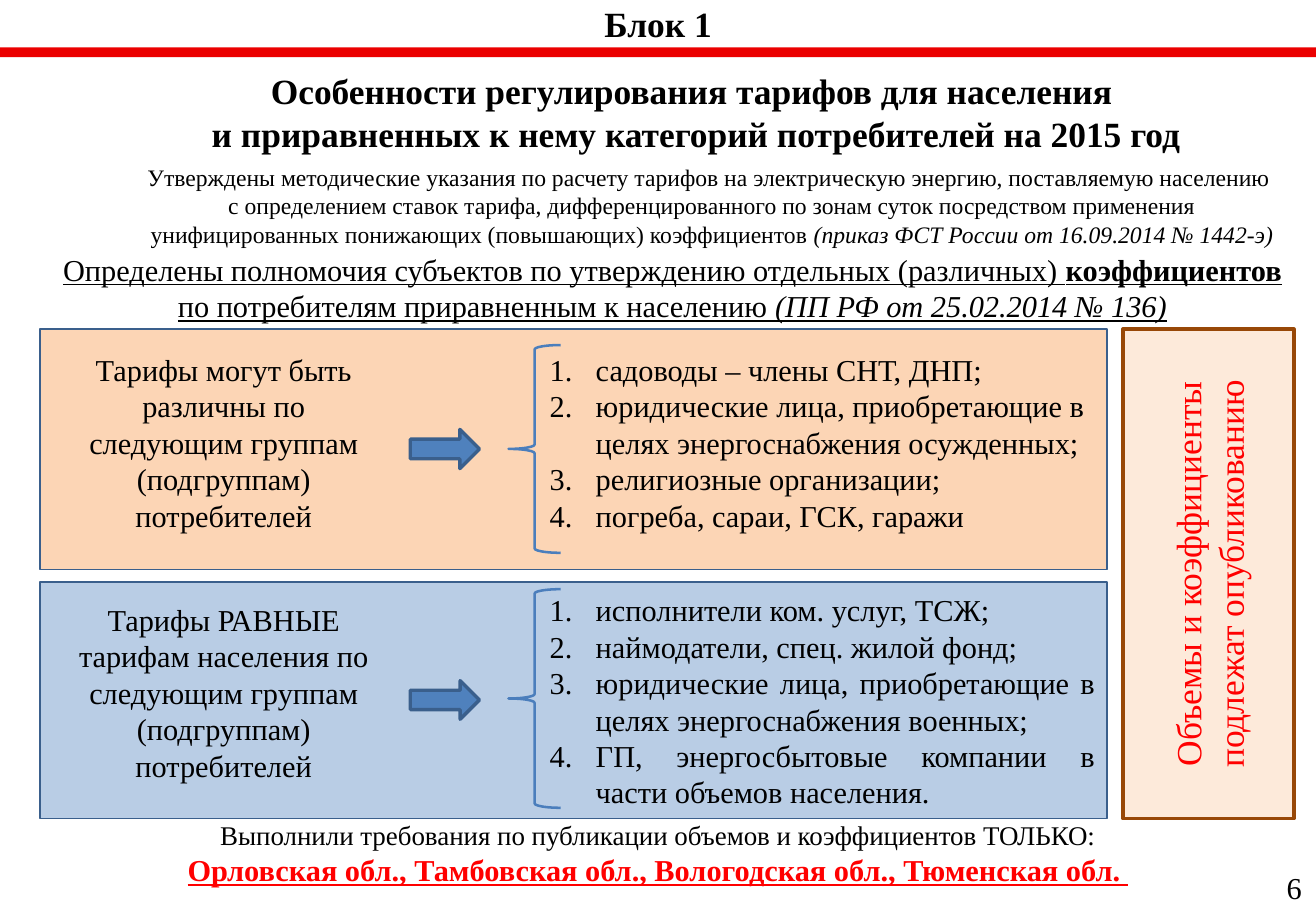
from collections import namedtuple
from dataclasses import dataclass
from lxml.etree import SubElement
from pptx import Presentation
from pptx.dml.color import RGBColor
from pptx.enum.shapes import MSO_SHAPE
from pptx.enum.text import MSO_ANCHOR, PP_ALIGN
from pptx.oxml.ns import qn
from pptx.util import Inches, Pt


@dataclass(frozen=True)
class Theme:
    font: str = "Times New Roman"
    ink: str = "000000"
    alert: str = "FF0000"
    band: str = "EB0000"
    peach: str = "FCD5B5"
    sky: str = "B9CDE5"
    cream: str = "FDEADA"
    brown: str = "984807"
    arrow: str = "4F81BD"
    edge: str = "3A5F8C"
    brace: str = "4B7EBC"
    head: int = 21
    body: int = 18
    note: int = 16
    small: int = 14


Box = namedtuple("Box", "left top width height")
T = Theme()
PAGE = Box(0, 0, 10.84, 7.5)
INDENT = Inches(0.38)


def cell(box, left, top, width, height):
    col, row = box.width / 100, box.height / 100
    return Box(box.left + left * col, box.top + top * row, width * col, height * row)


def place(box):
    return [Inches(side) for side in box]


def write(frame, paras, size, align=PP_ALIGN.CENTER, color=T.ink, count=False):
    for index, runs in enumerate(paras):
        para = frame.paragraphs[0] if index == 0 else frame.add_paragraph()
        para.alignment = align
        if count:
            props = para._p.get_or_add_pPr()
            props.set("marL", str(INDENT))
            props.set("indent", str(-INDENT))
            SubElement(props, qn("a:buAutoNum"), type="arabicPeriod")
        for text, style in runs:
            run = para.add_run()
            run.text = text
            font = run.font
            font.name = T.font
            font.size = Pt(size)
            font.color.rgb = RGBColor.from_string(color)
            font.bold = "b" in style
            font.italic = "i" in style
            font.underline = "u" in style


def label(shapes, box, paras, size, wrap=True, anchor=MSO_ANCHOR.TOP, **look):
    frame = shapes.add_textbox(*place(box)).text_frame
    frame.word_wrap = wrap
    frame.vertical_anchor = anchor
    write(frame, paras, size, **look)
    return frame


def draw(shapes, kind, box, fill=None, line=None, weight=1):
    shape = shapes.add_shape(kind, *place(box))
    shape.shadow.inherit = False
    if fill:
        shape.fill.solid()
        shape.fill.fore_color.rgb = RGBColor.from_string(fill)
    else:
        shape.fill.background()
    if line:
        shape.line.color.rgb = RGBColor.from_string(line)
        shape.line.width = Pt(weight)
    else:
        shape.line.fill.background()
    return shape


def header(shapes, box):
    draw(shapes, MSO_SHAPE.RECTANGLE, cell(box, 0, 5.2, 100, 1.07), T.band)
    label(shapes, cell(box, 44.93, -0.4, 10.15, 6), [[("Блок 1", "b")]], T.head, wrap=False)
    label(shapes, cell(box, 7.93, 6.93, 89.94, 11.33), [
        [("Особенности регулирования тарифов для населения ", "b")],
        [("и приравненных к нему категорий потребителей на 2015 год", "b")],
    ], T.head)


def decrees(shapes, box):
    label(shapes, cell(box, 9.69, 17.2, 88.84, 10.8), [
        [("Утверждены методические указания по расчету тарифов на "
          "электрическую энергию, поставляемую населению ", "")],
        [("с определением ставок тарифа, дифференцированного по зонам "
          "суток посредством применения", "")],
        [("унифицированных понижающих (повышающих) коэффициентов ", ""),
         ("(приказ ФСТ России от 16.09.2014 № 1442-э)", "i")],
    ], T.small, wrap=False)
    label(shapes, cell(box, 3.87, 27.73, 94.46, 7.6), [[
        ("Определены полномочия субъектов по утверждению отдельных (различных) ", "u"),
        ("коэффициентов", "bu"),
        (" по потребителям приравненным к населению ", "u"),
        ("(ПП РФ от 25.02.2014 № 136)", "iu"),
    ]], T.body, anchor=MSO_ANCHOR.MIDDLE)


def panel(shapes, box, fill, claim, groups, align, tops, tall):
    parts = shapes.add_group_shape().shapes
    claim_top, list_top, brace_top = tops
    draw(parts, MSO_SHAPE.RECTANGLE, box, fill, T.edge)
    draw(parts, MSO_SHAPE.LEFT_BRACE, cell(box, 43.9, brace_top, 4.9, tall),
         line=T.brace, weight=1.5)
    draw(parts, MSO_SHAPE.RIGHT_ARROW, cell(box, 34.7, 41.7, 6.48, 16.3),
         T.arrow, T.edge, 2)
    label(parts, cell(box, 1.02, claim_top, 32.4, 87), [[(claim, "")]], T.body)
    label(parts, cell(box, 46.64, list_top, 53.36, 100 - list_top),
          [[(group, "")] for group in groups], T.body, align=align, count=True)


def aside(shapes, box):
    shape = draw(shapes, MSO_SHAPE.RECTANGLE, box, T.cream, T.brown, 2)
    frame = shape.text_frame
    frame.word_wrap = True
    frame.vertical_anchor = MSO_ANCHOR.MIDDLE
    frame._txBody.bodyPr.set("vert", "vert270")
    write(frame, [[("Объемы и коэффициенты подлежат опубликованию", "")]],
          T.head, color=T.alert)


def footer(shapes, box):
    upper = [[("Выполнили требования по публикации объемов и коэффициентов ТОЛЬКО:", "")]]
    lower = [[("Орловская обл., Тамбовская обл., Вологодская обл., Тюменская обл. ", "bu")]]
    frame = label(shapes, cell(box, 11.35, 89.2, 77.3, 9.07), upper + lower, T.note)
    last = frame.paragraphs[1].runs[0].font
    last.size = Pt(T.body)
    last.color.rgb = RGBColor.from_string(T.alert)
    label(shapes, cell(box, 96.86, 94.8, 3.04, 5.33), [[("6", "")]], T.body,
          wrap=False, align=PP_ALIGN.LEFT)


def main():
    deck = Presentation()
    deck.slide_width, deck.slide_height = Inches(PAGE.width), Inches(PAGE.height)
    shapes = deck.slides.add_slide(deck.slide_layouts[6]).shapes
    header(shapes, PAGE)
    decrees(shapes, PAGE)
    panel(shapes, cell(PAGE, 3.04, 36.13, 81.09, 26.4), T.peach,
          "Тарифы могут быть различны по следующим группам (подгруппам) потребителей",
          ["садоводы – члены СНТ, ДНП;",
           "юридические лица, приобретающие в целях энергоснабжения осужденных;",
           "религиозные организации;",
           "погреба, сараи, ГСК, гаражи"],
          PP_ALIGN.LEFT, (6.6, 6.6, 6.6), 86.4)
    panel(shapes, cell(PAGE, 3.04, 63.87, 81.09, 26), T.sky,
          "Тарифы РАВНЫЕ тарифам населения по следующим группам (подгруппам) потребителей",
          ["исполнители ком. услуг, ТСЖ;",
           "наймодатели, спец. жилой фонд;",
           "юридические лица, приобретающие в целях энергоснабжения военных;",
           "ГП, энергосбытовые компании в части объемов населения."],
          PP_ALIGN.JUSTIFY, (5.6, 1.5, 3.1), 92.3)
    aside(shapes, cell(PAGE, 85.33, 36.13, 13.01, 53.74))
    footer(shapes, PAGE)
    deck.save("out.pptx")


if __name__ == "__main__":
    main()
